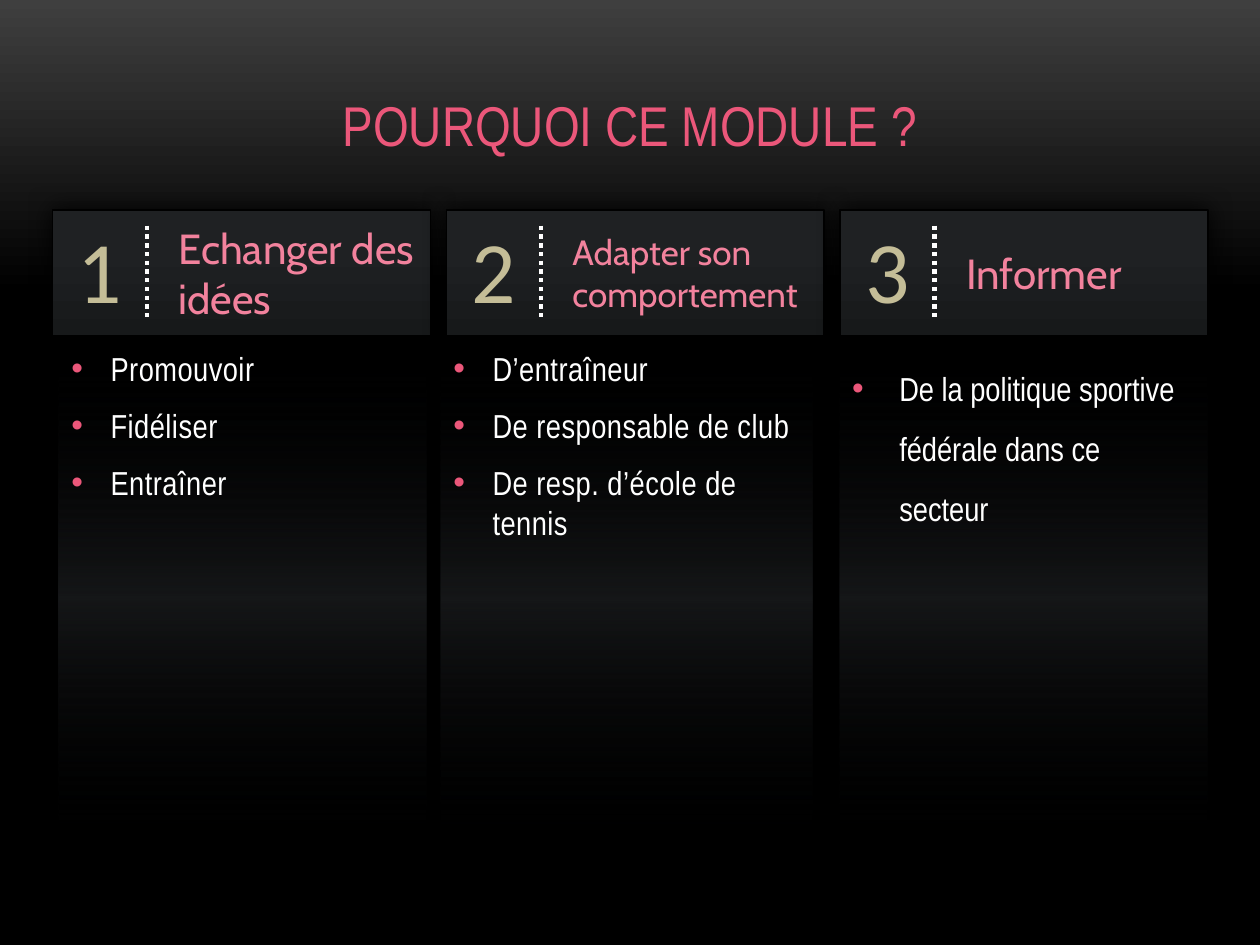
from lxml import etree
from pptx import Presentation
from pptx.dml.color import RGBColor
from pptx.enum.dml import MSO_LINE
from pptx.enum.shapes import MSO_CONNECTOR, MSO_SHAPE
from pptx.enum.text import MSO_ANCHOR, MSO_AUTO_SIZE, PP_ALIGN
from pptx.oxml.ns import qn
from pptx.util import Cm, Pt

RECTANGLE = MSO_SHAPE.RECTANGLE
STRAIGHT = MSO_CONNECTOR.STRAIGHT
DOTS = MSO_LINE.ROUND_DOT
TOP, MIDDLE = MSO_ANCHOR.TOP, MSO_ANCHOR.MIDDLE
LEFT, CENTER = PP_ALIGN.LEFT, PP_ALIGN.CENTER

TITLE = "POURQUOI CE MODULE ?"
LIST_SPACING = {"space_before": Pt(3.8), "space_after": Pt(6)}
COLUMNS = [
    {"heading": "Echanger des idées", "size": 24, "width": 7.62,
     "items": ["Promouvoir", "Fidéliser", "Entraîner"],
     "panel": (1.19, 7.41), "right_inset": 0, "indent": 0.79,
     "tracking": 30, "spacing": LIST_SPACING},
    {"heading": "Adapter son comportement", "size": 20, "width": 7.62,
     "items": ["D’entraîneur", "De responsable de club", "De resp. d’école de tennis"],
     "panel": (8.89, 7.49), "right_inset": 0.25, "indent": 0.79,
     "tracking": 30, "spacing": LIST_SPACING},
    {"heading": "Informer", "size": 24, "width": 7.41,
     "items": ["De la politique sportive fédérale dans ce secteur"],
     "panel": (16.93, 7.41), "right_inset": 0.25, "indent": 0.95,
     "tracking": 0, "spacing": {"line_spacing": 1.5}},
]

THEME = {
    "title": ("Arial Narrow", 32, "EB577A"),
    "body": ("Arial Narrow", 19, "FFFFFF"),
    "number": ("Calibri", 50, "C4BD97"),
    "heading": ("Cabin", None, "F2829D"),
    "bullet": "EB577A",
    "divider": "FFFFFF",
    "border": "000000",
    "background": [(0, "3F3F3F", 100), (31, "000000", 100), (100, "000000", 100)],
    "header": [(32, "1F2123", 100), (100, "17191A", 100)],
    "panel": [(0, "000000", 0), (50, "1C1E20", 75), (100, "000000", 0)],
}

FIRST_LEFT, PITCH = 1.06, 7.94
HEADER_TOP, HEADER_HEIGHT = 4.23, 2.54
PANEL_TOP, PANEL_HEIGHT = HEADER_TOP + HEADER_HEIGHT, 10.58
NUMBER_WIDTH, NUMBER_HEIGHT = 1.9, 2.39
DIVIDER_MARGIN = 0.32


def child(parent, tag, **attributes):
    return etree.SubElement(parent, qn(tag), attributes)


def apply(target, **values):
    for key, value in values.items():
        setattr(target, key, value)


def paint_gradient(fill, owner, stops):
    fill.gradient()
    fill.gradient_angle = 270
    stop_list = next(owner.iter(qn("a:gsLst")))
    for old in list(stop_list):
        stop_list.remove(old)
    for position, color, opacity in stops:
        stop = child(stop_list, "a:gs", pos=str(position * 1000))
        shade = child(stop, "a:srgbClr", val=color)
        if opacity < 100:
            child(shade, "a:alpha", val=str(opacity * 1000))


def write(paragraph, text, style, size=None, tracking=0):
    name, default_size, color = THEME[style]
    run = paragraph.add_run()
    run.text = text
    apply(run.font, name=name, size=Pt(size or default_size), bold=False)
    run.font.color.rgb = RGBColor.from_string(color)
    if tracking:
        run.font._element.set("spc", str(tracking))


def add_block(slide, box, stops, **frame_format):
    block = slide.shapes.add_shape(RECTANGLE, *map(Cm, box))
    block.shadow.inherit = False
    paint_gradient(block.fill, block._element.spPr, stops)
    block.line.fill.background()
    apply(block.text_frame, word_wrap=True, **frame_format)
    return block


def add_panel(slide, column):
    left, width = column["panel"]
    panel = add_block(slide, (left, PANEL_TOP, width, PANEL_HEIGHT), THEME["panel"],
                      vertical_anchor=TOP, margin_left=Cm(0.25), margin_top=Cm(0.25),
                      margin_right=Cm(column["right_inset"]), margin_bottom=Cm(0.13))
    frame = panel.text_frame
    for index, item in enumerate(column["items"]):
        paragraph = frame.add_paragraph() if index else frame.paragraphs[0]
        properties = paragraph._p.get_or_add_pPr()
        indent = Cm(column["indent"])
        properties.set("marL", str(indent))
        properties.set("indent", str(-indent))
        child(child(properties, "a:buClr"), "a:srgbClr", val=THEME["bullet"])
        child(properties, "a:buFont", typeface="Arial")
        child(properties, "a:buChar", char="•")
        apply(paragraph, alignment=LEFT, **column["spacing"])
        if index == 0:
            paragraph.space_before = Pt(0)
        write(paragraph, item, "body", tracking=column["tracking"])


def add_header(slide, number, left, column):
    header = add_block(slide, (left, HEADER_TOP, column["width"], HEADER_HEIGHT),
                       THEME["header"], vertical_anchor=MIDDLE, margin_left=Cm(2.54),
                       margin_top=Cm(0.13), margin_right=Cm(0.25), margin_bottom=Cm(0.13))
    header.line.color.rgb = RGBColor.from_string(THEME["border"])
    header.line.width = Pt(1)
    effects = header._element.spPr.find(qn("a:effectLst"))
    shadow = child(effects, "a:outerShdw", blurRad=str(Cm(0.5)), dist="0", algn="ctr")
    child(shadow, "a:srgbClr", val=THEME["border"])
    heading = header.text_frame.paragraphs[0]
    heading.alignment = LEFT
    write(heading, column["heading"], "heading", column["size"])

    badge = slide.shapes.add_textbox(
        *map(Cm, (left, HEADER_TOP, NUMBER_WIDTH, NUMBER_HEIGHT)))
    apply(badge.text_frame, word_wrap=True, auto_size=MSO_AUTO_SIZE.SHAPE_TO_FIT_TEXT)
    digit = badge.text_frame.paragraphs[0]
    digit.alignment = CENTER
    write(digit, str(number), "number")

    x = left + NUMBER_WIDTH
    divider = slide.shapes.add_connector(STRAIGHT, *map(Cm, (
        x, HEADER_TOP + DIVIDER_MARGIN, x, HEADER_TOP + HEADER_HEIGHT - DIVIDER_MARGIN)))
    divider.line.color.rgb = RGBColor.from_string(THEME["divider"])
    apply(divider.line, width=Pt(2.5), dash_style=DOTS)
    child(divider._element.spPr, "a:effectLst")


def add_title(slide):
    title = slide.shapes.title
    apply(title, left=Cm(2.12), top=Cm(1.7), width=Cm(21.16), height=Cm(1.63))
    apply(title.text_frame, word_wrap=True, vertical_anchor=TOP,
          auto_size=MSO_AUTO_SIZE.NONE)
    paragraph = title.text_frame.paragraphs[0]
    paragraph.alignment = CENTER
    write(paragraph, TITLE, "title")


def main():
    deck = Presentation()
    apply(deck, slide_width=Cm(25.4), slide_height=Cm(19.05))
    slide = deck.slides.add_slide(deck.slide_layouts[5])
    paint_gradient(slide.background.fill, slide._element, THEME["background"])
    add_title(slide)
    for index, column in enumerate(COLUMNS):
        add_panel(slide, column)
        add_header(slide, index + 1, FIRST_LEFT + index * PITCH, column)
    deck.save("out.pptx")


if __name__ == "__main__":
    main()
